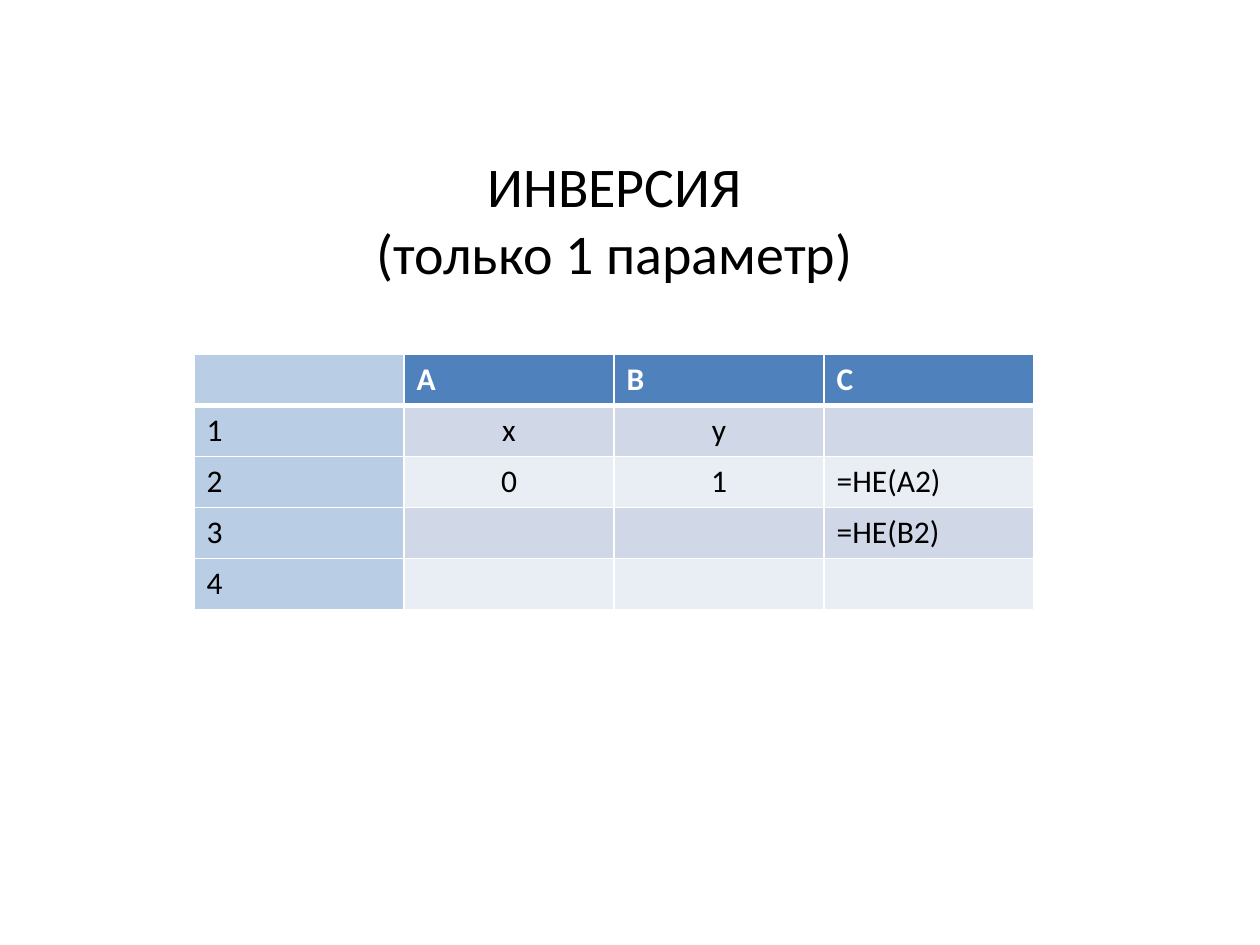
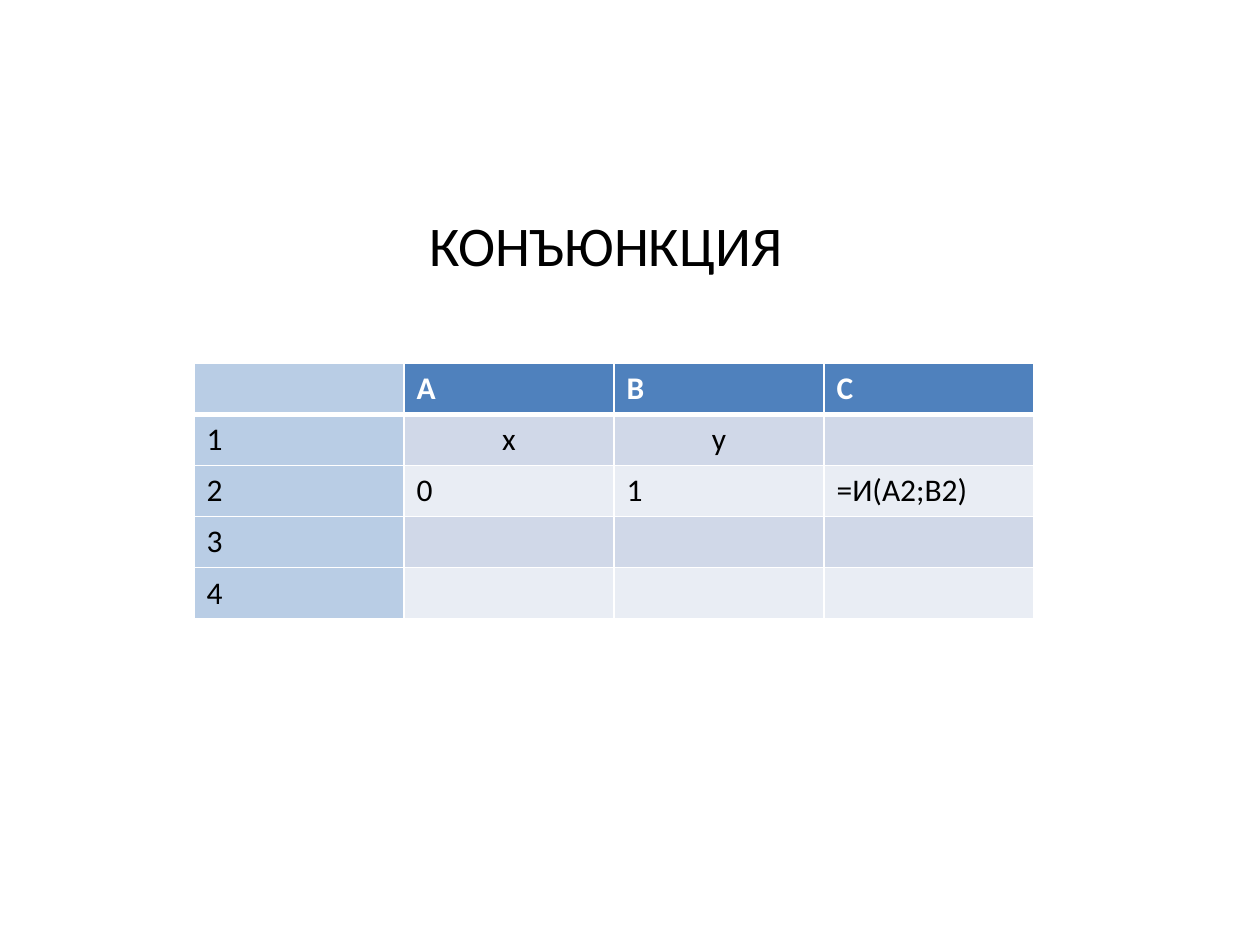
from dataclasses import dataclass

from lxml.etree import SubElement
from pptx import Presentation
from pptx.dml.color import RGBColor as RGB
from pptx.enum.text import MSO_AUTO_SIZE as AutoSize, PP_ALIGN as Align
from pptx.oxml.ns import qn
from pptx.util import Pt


@dataclass(frozen=True)
class Theme:
    font: str = "Calibri"
    title_size: float = 32
    cell_size: float = 18
    ink: str = "000000"
    paper: str = "FFFFFF"
    header: str = "4F81BD"
    row_labels: str = "B9CDE5"
    bands: tuple = ("D0D8E8", "E9EDF4")
    thin: float = 1
    thick: float = 3


THEME = Theme()
COLUMNS = ["", "A", "B", "C"]
TABLE_LEFT, TABLE_WIDTH, ROW_HEIGHT = 110.9, 480, 29.2


def write(frame, text, *, size, color=THEME.ink, bold=False, align=Align.LEFT):
    """Fill a text frame, one paragraph for each line of text."""
    for number, line in enumerate(text.split("\n")):
        paragraph = frame.add_paragraph() if number else frame.paragraphs[0]
        paragraph.alignment = align
        font = paragraph.font
        if line:
            run = paragraph.add_run()
            run.text = line
            font = run.font
        font.name, font.size, font.bold = THEME.font, Pt(size), bold
        font.color.rgb = RGB.from_string(color)


def add_title(slide, text, box, align):
    title = slide.shapes.add_textbox(*map(Pt, box))
    frame = title.text_frame
    write(frame, text, size=THEME.title_size, align=align)
    frame.word_wrap = False
    frame.auto_size = AutoSize.SHAPE_TO_FIT_TEXT


def set_borders(cell, **widths):
    """Draw paper-coloured cell borders; widths are keyed L, R, T, B."""
    properties = cell._tc.get_or_add_tcPr()
    for side, width in widths.items():
        line = SubElement(properties, qn(f"a:ln{side}"), w=str(int(Pt(width))))
        fill = SubElement(line, qn("a:solidFill"))
        SubElement(fill, qn("a:srgbClr"), val=THEME.paper)


def cell_fill(row, column):
    if column == 0:
        return THEME.row_labels
    return THEME.bands[(row - 1) % 2] if row else THEME.header


def add_sheet(slide, top, rows, centered_rows):
    """Draw a spreadsheet fragment with column letters and row numbers."""
    grid = [COLUMNS] + [[str(n), *row] for n, row in enumerate(rows, 1)]
    box = (TABLE_LEFT, top, TABLE_WIDTH, ROW_HEIGHT * len(grid))
    table = slide.shapes.add_table(len(grid), len(COLUMNS), *map(Pt, box)).table
    for column in table.columns:
        column.width = Pt(TABLE_WIDTH / len(COLUMNS))
    for r, values in enumerate(grid):
        table.rows[r].height = Pt(ROW_HEIGHT)
        for c, value in enumerate(values):
            cell = table.cell(r, c)
            set_borders(cell, L=THEME.thin, R=THEME.thin,
                        T=THEME.thick if r == 1 else THEME.thin,
                        B=THEME.thick if r == 0 else THEME.thin)
            cell.fill.solid()
            cell.fill.fore_color.rgb = RGB.from_string(cell_fill(r, c))
            centered = r in centered_rows and c in (1, 2)
            write(cell.text_frame, value, size=THEME.cell_size, bold=r == 0,
                  color=THEME.ink if r else THEME.paper,
                  align=Align.CENTER if centered else Align.LEFT)


def add_operation_slide(deck, title, title_box, title_align, sheet_top, rows,
                        centered_rows):
    slide = deck.slides.add_slide(deck.slide_layouts[6])
    add_sheet(slide, sheet_top, rows, centered_rows)
    add_title(slide, title, title_box, title_align)


def main():
    deck = Presentation()
    deck.slide_width, deck.slide_height = Pt(720), Pt(540)
    variables, blank = ["x", "y", ""], ["", "", ""]
    add_operation_slide(
        deck, "ИНВЕРСИЯ\n(только 1 параметр)", (206.6, 82.8, 289.4, 85),
        Align.CENTER, 202.4,
        [variables, ["0", "1", "=НЕ(А2)"], ["", "", "=НЕ(B2)"], blank],
        centered_rows=(1, 2))
    add_operation_slide(
        deck, "КОНЪЮНКЦИЯ", (238.3, 116.6, 218.2, 46),
        Align.LEFT, 207.6,
        [variables, ["0", "1", "=И(А2;B2)"], blank, blank],
        centered_rows=(1,))
    deck.save("out.pptx")


if __name__ == "__main__":
    main()
